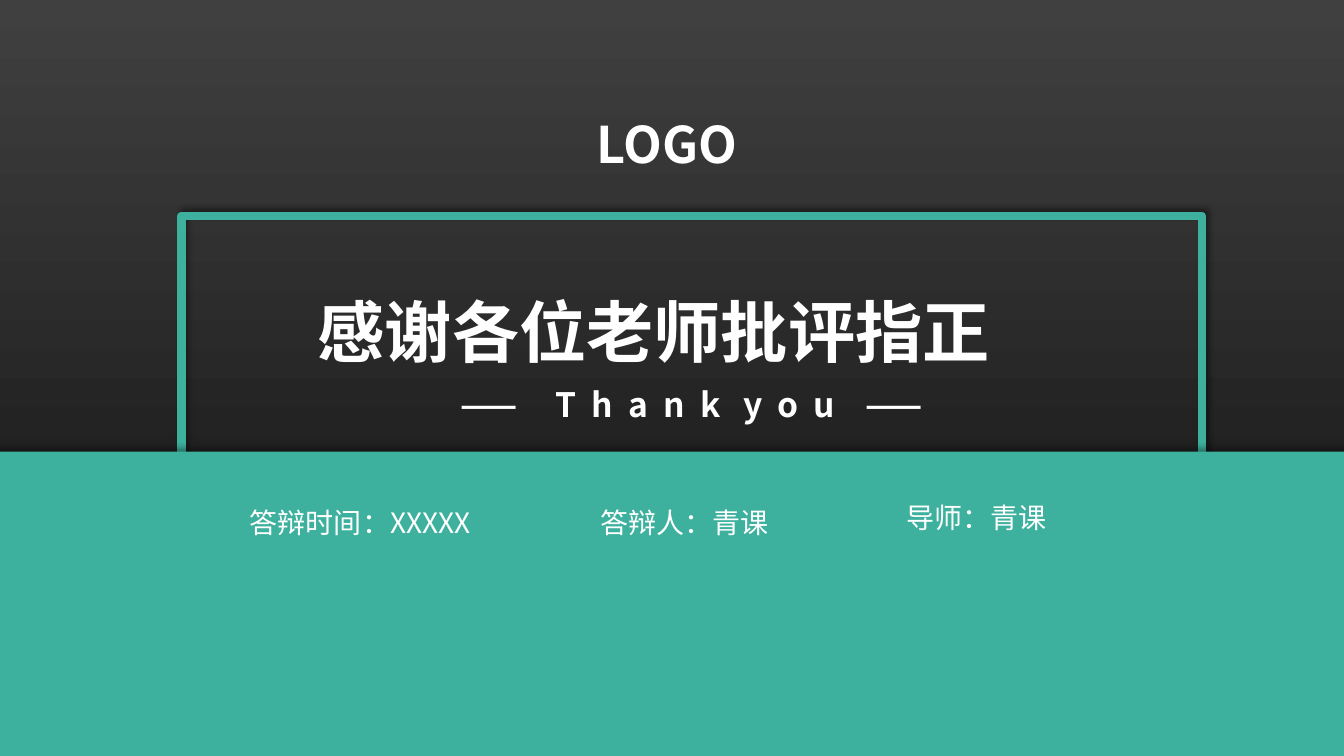
from lxml import etree
from pptx import Presentation
from pptx import util as u
from pptx.dml.color import RGBColor
from pptx.enum import shapes, text
from pptx.oxml import ns

Inches = u.Inches
TEAL = RGBColor(0x3D, 0xB1, 0x9E)
WHITE = RGBColor(0xFF, 0xFF, 0xFF)
CHARCOAL = RGBColor(0x40, 0x40, 0x40)
NEAR_BLACK = RGBColor(0x0D, 0x0D, 0x0D)
FONT = "Noto Sans CJK SC"
SPACE_WIDTH = 0.224


def paint_background(slide):
    fill = slide.background.fill
    fill.gradient()
    fill.gradient_angle = 270
    for stop, position, color in zip(fill.gradient_stops, (0, 1), (CHARCOAL, NEAR_BLACK)):
        stop.position = position
        stop.color.rgb = color


def add_shadow(shape, direction):
    shape.shadow.inherit = False
    effects = shape._element.spPr.find(ns.qn("a:effectLst"))
    shadow = etree.SubElement(
        effects, ns.qn("a:outerShdw"),
        blurRad=str(u.Pt(4)), dist=str(u.Pt(3)), dir=str(direction * 60000),
        algn="ctr", rotWithShape="0")
    color = etree.SubElement(shadow, ns.qn("a:srgbClr"), val="000000")
    etree.SubElement(color, ns.qn("a:alpha"), val="40000")


def add_rectangle(slide, box, shadow_direction):
    shape = slide.shapes.add_shape(shapes.MSO_SHAPE.RECTANGLE, *map(Inches, box))
    add_shadow(shape, shadow_direction)
    return shape


def add_frame(slide, box):
    frame = add_rectangle(slide, box, 315)
    frame.fill.background()
    frame.line.color.rgb = TEAL
    frame.line.width = u.Pt(6)


def add_band(slide, box):
    band = add_rectangle(slide, box, 270)
    band.fill.solid()
    band.fill.fore_color.rgb = TEAL
    band.line.fill.background()
    return band


def format_run(run, size, bold):
    run.font.size = u.Pt(size)
    run.font.bold = bold
    run.font.name = FONT
    run.font.color.rgb = WHITE
    east_asian = etree.SubElement(run._r.get_or_add_rPr(), ns.qn("a:ea"))
    east_asian.set("typeface", FONT)


def format_text(shape, size, bold=False, spacing=None, align=text.PP_ALIGN.LEFT):
    frame = shape.text_frame
    frame.word_wrap = True
    frame.vertical_anchor = text.MSO_ANCHOR.TOP
    frame.auto_size = text.MSO_AUTO_SIZE.SHAPE_TO_FIT_TEXT
    paragraph = frame.paragraphs[0]
    paragraph.alignment = align
    paragraph.line_spacing = spacing
    for run in paragraph.runs:
        format_run(run, size, bold)


def add_label(slide, box, wording, size, **style):
    label = slide.shapes.add_textbox(*map(Inches, box))
    label.text_frame.text = wording
    format_text(label, size, **style)


def place_title(slide, box, wording, behind):
    title = slide.shapes.title
    title.left, title.top, title.width, title.height = map(Inches, box)
    title.text_frame.text = wording
    format_text(title, 48, bold=True, spacing=1.5, align=text.PP_ALIGN.JUSTIFY)
    behind._element.addnext(title._element)


def add_spaced_label(slide, box, words, gaps, size):
    label = slide.shapes.add_textbox(*map(Inches, box))
    paragraph = label.text_frame.paragraphs[0]
    for word, gap in zip(words, gaps + [0]):
        paragraph.add_run().text = word
        if gap:
            space = paragraph.add_run()
            space.text = " "
            extra = round((gap - 1) * SPACE_WIDTH * size * 100)
            space._r.get_or_add_rPr().set("spc", str(extra))
    format_text(label, size, bold=True, spacing=1.5, align=text.PP_ALIGN.CENTER)


def main():
    presentation = Presentation()
    presentation.slide_width = Inches(13.33)
    presentation.slide_height = Inches(7.5)
    slide = presentation.slides.add_slide(presentation.slide_layouts[5])

    paint_background(slide)
    add_frame(slide, (1.8, 2.14, 10.12, 3.09))
    band = add_band(slide, (-0.04, 4.48, 13.41, 3.06))
    place_title(slide, (3.05, 2.43, 7.62, 1.2), "感谢各位老师批评指正", band)
    add_spaced_label(slide, (3.05, 3.56, 7.62, 0.66),
                     ["——", *"Thankyou", "——"], [5, 2, 2, 2, 2, 3, 2, 2, 4], 24)
    add_label(slide, (5.82, 0.77, 1.7, 0.93), "LOGO", 36, bold=True, spacing=1.5)
    for left, top, wording in (
        (2.38, 4.97, "答辩时间：XXXXX"),
        (5.86, 4.97, "答辩人：青课"),
        (8.89, 4.92, "导师：青课"),
    ):
        add_label(slide, (left, top, 3.03, 0.44), wording, 20)

    presentation.save("out.pptx")


if __name__ == "__main__":
    main()
